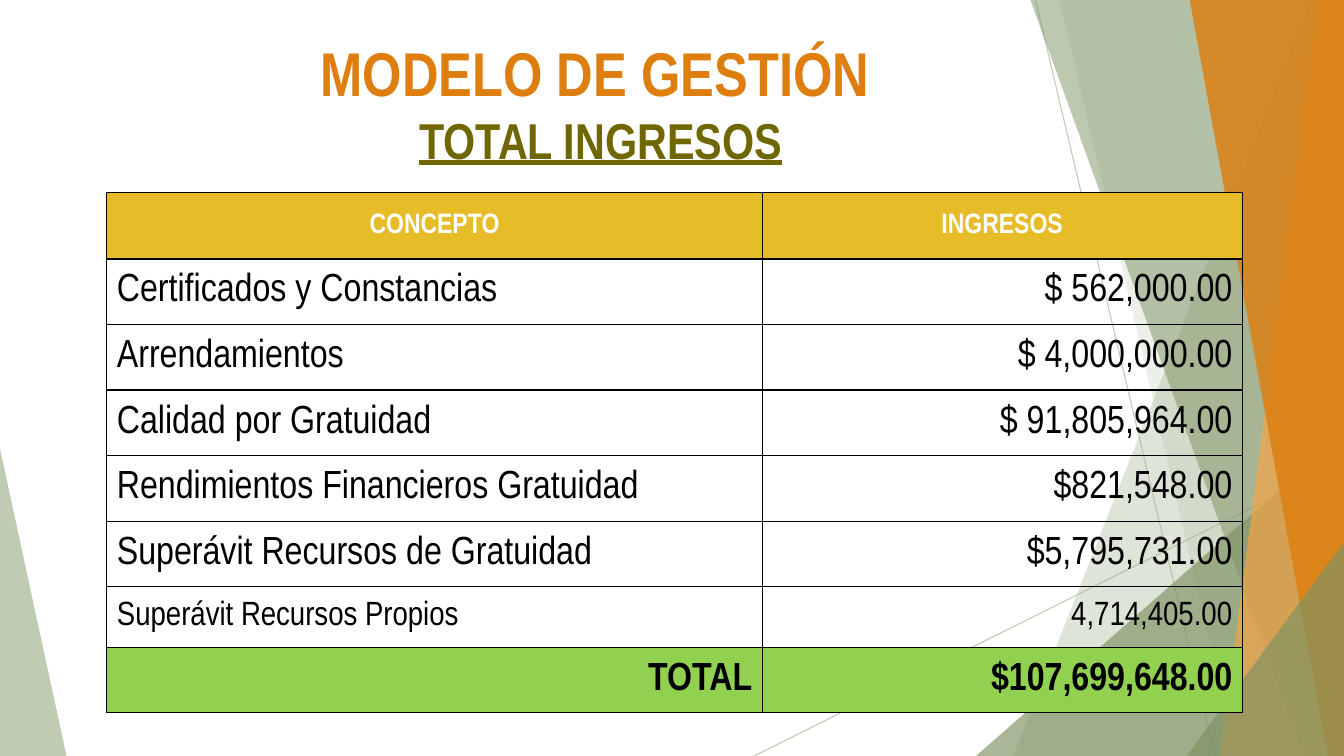
from lxml import etree
from pptx import Presentation
from pptx.dml.color import RGBColor
from pptx.enum.shapes import MSO_CONNECTOR
from pptx.enum.text import MSO_ANCHOR, PP_ALIGN
from pptx.oxml.ns import qn
from pptx.util import Inches, Pt

LEFT, CENTER, RIGHT = PP_ALIGN.LEFT, PP_ALIGN.CENTER, PP_ALIGN.RIGHT
MIDDLE = MSO_ANCHOR.MIDDLE
STRAIGHT = MSO_CONNECTOR.STRAIGHT

FONT = "Arial Narrow"
WIDTH, HEIGHT = 13.33, 7.5
COLORS = {
    "sage": "A5B592", "moss": "7D9263", "amber": "F3A447", "orange": "DD7E0E",
    "olive": "706702", "gold": "E7BC29", "green": "92D050",
    "white": "FFFFFF", "black": "000000",
}

# Background facets, back to front: colour, opacity in percent, corners
LEFT_FACET = ("sage", 70, [(0, 4.45), (0.66, HEIGHT), (0, HEIGHT)])
RIGHT_FACETS = [
    ("sage", 36, [(13, 0), (10.05, HEIGHT), (WIDTH, HEIGHT), (WIDTH, 0)]),
    ("sage", 20, [(10.51, 0), (12.26, HEIGHT), (WIDTH, HEIGHT), (WIDTH, 0)]),
    ("moss", 66, [(9.68, HEIGHT), (WIDTH, 4.3), (WIDTH, HEIGHT)]),
    ("moss", 50, [(10.22, 0), (12.93, HEIGHT), (WIDTH, HEIGHT), (WIDTH, 0)]),
    ("amber", 70, [(13.08, 0), (12.1, HEIGHT), (WIDTH, HEIGHT), (WIDTH, 0)]),
    ("orange", 82, [(11.8, 0), (13.17, HEIGHT), (WIDTH, HEIGHT), (WIDTH, 0)]),
    ("moss", 66, [(11.77, HEIGHT), (WIDTH, 5.38), (WIDTH, HEIGHT)]),
]
FACET_LINES = [((7.48, HEIGHT), (WIDTH, 4.58)), ((10.27, 0), (12.05, HEIGHT))]

INCOME = [
    ("Certificados y Constancias", "$ 562,000.00"),
    ("Arrendamientos", "$ 4,000,000.00"),
    ("Calidad por Gratuidad", "$ 91,805,964.00"),
    ("Rendimientos Financieros Gratuidad", "$821,548.00"),
    ("Superávit Recursos de Gratuidad", "$5,795,731.00"),
]
OWN_SURPLUS = ("Superávit Recursos Propios", "4,714,405.00")
HEADER = ("CONCEPTO", "INGRESOS")
TOTAL = ("TOTAL", "$107,699,648.00")
COLUMN_WIDTHS = (6.5, 4.76)
ROW_HEIGHTS = (0.66, *[0.65] * 5, 0.6, 0.65)


def color(name):
    return RGBColor.from_string(COLORS[name])


def set_opacity(fill, percent):
    """Add an opacity to the colour of a solid fill."""
    element = fill._xPr.find(qn("a:solidFill"))[0]
    etree.SubElement(element, qn("a:alpha"), val=str(percent * 1000))


def add_facet(slide, color_name, opacity, corners):
    points = [(Inches(x), Inches(y)) for x, y in corners]
    builder = slide.shapes.build_freeform(*points[0])
    builder.add_line_segments(points[1:], close=True)
    shape = builder.convert_to_shape()
    shape.shadow.inherit = False
    shape.fill.solid()
    shape.fill.fore_color.rgb = color(color_name)
    set_opacity(shape.fill, opacity)
    shape.line.fill.background()


def add_facet_line(slide, start, end):
    connector = slide.shapes.add_connector(
        STRAIGHT, *[Inches(value) for value in (*start, *end)])
    connector.line.width = Pt(0.75)
    connector.line.color.rgb = color("sage")
    set_opacity(connector.line.fill, 70)
    etree.SubElement(connector._element.spPr, qn("a:effectLst"))


def add_run(paragraph, text, color_name, **formats):
    run = paragraph.add_run()
    run.text = text
    run.font.color.rgb = color(color_name)
    for name, value in {"name": FONT, **formats}.items():
        setattr(run.font, name, value)


def add_title(slide):
    box = slide.shapes.add_textbox(
        Inches(0.76), Inches(0.25), Inches(10.29), Inches(1.53))
    frame = box.text_frame
    frame.word_wrap = True
    frame.vertical_anchor = MIDDLE
    paragraph = frame.paragraphs[0]
    paragraph.alignment = CENTER
    add_run(paragraph, "MODELO DE GESTIÓN", "orange", size=Pt(44.1), bold=True)
    paragraph.add_line_break()
    add_run(paragraph, " ", "olive", size=Pt(32.4), bold=True)
    add_run(paragraph, "TOTAL INGRESOS", "olive",
            size=Pt(36), bold=True, underline=True)


def add_borders(cell):
    properties = cell._tc.get_or_add_tcPr()
    for index, side in enumerate(("lnL", "lnR", "lnT", "lnB")):
        line = etree.Element(qn(f"a:{side}"), w=str(Pt(1)))
        fill = etree.SubElement(line, qn("a:solidFill"))
        etree.SubElement(fill, qn("a:srgbClr"), val=COLORS["black"])
        properties.insert(index, line)


def fill_row(row, texts, alignments, size, color_name="black", fill=None, bold=False):
    for cell, text, alignment in zip(row.cells, texts, alignments):
        cell.vertical_anchor = MIDDLE
        if fill:
            cell.fill.solid()
            cell.fill.fore_color.rgb = color(fill)
        else:
            cell.fill.background()
        add_borders(cell)
        paragraph = cell.text_frame.paragraphs[0]
        paragraph.alignment = alignment
        add_run(paragraph, text, color_name, size=Pt(size), bold=bold)


def add_income_table(slide):
    table = slide.shapes.add_table(
        len(ROW_HEIGHTS), len(COLUMN_WIDTHS), Inches(1.06), Inches(1.91),
        Inches(sum(COLUMN_WIDTHS)), Inches(sum(ROW_HEIGHTS))).table
    table.first_row = table.horz_banding = False
    for column, width in zip(table.columns, COLUMN_WIDTHS):
        column.width = Inches(width)
    for row, height in zip(table.rows, ROW_HEIGHTS):
        row.height = Inches(height)

    header, *income_rows, surplus, total = table.rows
    fill_row(header, HEADER, (CENTER, CENTER), 20, "white", "gold", True)
    for row, texts in zip(income_rows, INCOME):
        fill_row(row, texts, (LEFT, RIGHT), 28)
    fill_row(surplus, OWN_SURPLUS, (LEFT, RIGHT), 24)
    fill_row(total, TOTAL, (RIGHT, RIGHT), 28, fill="green", bold=True)


def main():
    presentation = Presentation()
    presentation.slide_width = Inches(WIDTH)
    presentation.slide_height = Inches(HEIGHT)
    slide = presentation.slides.add_slide(presentation.slide_layouts[6])

    # Decorative background
    add_facet(slide, *LEFT_FACET)
    for start, end in FACET_LINES:
        add_facet_line(slide, start, end)
    for facet in RIGHT_FACETS:
        add_facet(slide, *facet)

    # Content
    add_title(slide)
    add_income_table(slide)
    presentation.save("out.pptx")


if __name__ == "__main__":
    main()
